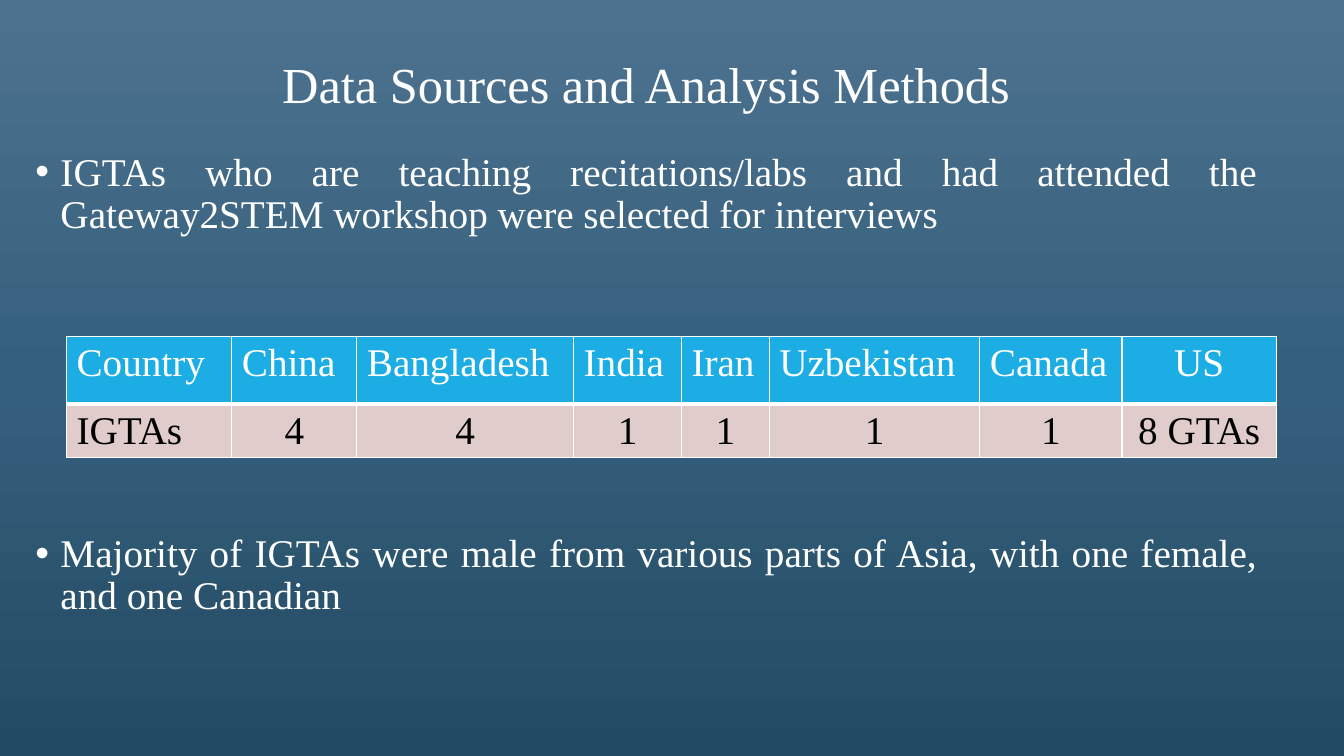
"""Build the slide on data sources and analysis methods."""
from copy import deepcopy

from lxml import etree
from pptx import Presentation
from pptx.dml.color import RGBColor
from pptx.enum import text
from pptx.oxml import ns
from pptx.util import Inches, Pt

WHITE = RGBColor(0xFF, 0xFF, 0xFF)
BLACK = RGBColor(0, 0, 0)
BLUE = RGBColor(0x1C, 0xAD, 0xE4)
PINK = RGBColor(0xE0, 0xCC, 0xCA)
SKY = [RGBColor(0x4D, 0x72, 0x8F), RGBColor(0x35, 0x60, 0x7D), RGBColor(0x23, 0x4A, 0x63)]
ALIGN = text.PP_ALIGN


def style(para, size, color, align):
    para.font.name = "Times New Roman"
    para.font.size = Pt(size)
    para.font.color.rgb = color
    para.alignment = align


def paint(parent, color):
    fill = etree.SubElement(parent, ns.qn("a:solidFill"))
    etree.SubElement(fill, ns.qn("a:srgbClr"), val=str(color))


deck = Presentation()
deck.slide_width, deck.slide_height = Inches(13.33), Inches(7.5)
slide = deck.slides.add_slide(deck.slide_layouts[1])

back = slide.background.fill
back.gradient()
back.gradient_angle = 270
stops = slide.element.find(".//" + ns.qn("a:gsLst"))
stops.insert(1, deepcopy(stops[0]))
for stop, color, place in zip(back.gradient_stops, SKY, (0, 0.5, 1)):
    stop.color.rgb = color
    stop.position = place

title, body = slide.placeholders
boxes = [(title, 0.66, 0.14, 11.5, 1.45), (body, 0.25, 1.46, 12.32, 5.9)]
for box, left, top, width, height in boxes:
    box.left, box.top = Inches(left), Inches(top)
    box.width, box.height = Inches(width), Inches(height)
    box.text_frame.auto_size = text.MSO_AUTO_SIZE.NONE

title.text_frame.text = "Data Sources and Analysis Methods"
title.text_frame.vertical_anchor = text.MSO_ANCHOR.MIDDLE
head = title.text_frame.paragraphs[0]
style(head, 36, WHITE, ALIGN.CENTER)
head.line_spacing = 0.9

body.text_frame.text = (
    "IGTAs who are teaching recitations/labs and had attended the "
    "Gateway2STEM workshop were selected for interviews\n"
    "Majority of IGTAs were male from various parts of Asia, with one female, "
    "and one Canadian"
)
for para, gap in zip(body.text_frame.paragraphs, (0, 212)):
    style(para, 28, WHITE, ALIGN.JUSTIFY)
    para.line_spacing = 0.9
    para.space_before = Pt(gap)
    props = para.font.fill._xPr.getparent()
    props.set("marL", str(Inches(0.25)))
    props.set("indent", str(Inches(-0.25)))
    tint = etree.Element(ns.qn("a:buClr"))
    etree.SubElement(tint, ns.qn("a:srgbClr"), val=str(WHITE))
    mark = etree.Element(ns.qn("a:buChar"), char="•")
    for item in (tint, mark):
        props.find(ns.qn("a:defRPr")).addprevious(item)

rows = [
    ["Country", "China", "Bangladesh", "India", "Iran", "Uzbekistan", "Canada", "US"],
    ["IGTAs", "4", "4", "1", "1", "1", "1", "8 GTAs"],
]
widths = [1.64, 1.24, 2.15, 1.07, 0.87, 2.09, 1.41, 1.53]
heights = [0.67, 0.53]
looks = [(BLUE, WHITE, {"B": 3}), (PINK, BLACK, {"T": 3})]
table = slide.shapes.add_table(
    2, 8, Inches(0.66), Inches(3.34), Inches(sum(widths)), Inches(sum(heights))
).table
for col, width in zip(table.columns, widths):
    col.width = Inches(width)
for r, (names, (fill, ink, thick)) in enumerate(zip(rows, looks)):
    table.rows[r].height = Inches(heights[r])
    for c, name in enumerate(names):
        cell = table.cell(r, c)
        cell.text = name
        mid = name == "US" or (r == 1 and c > 0)
        style(cell.text_frame.paragraphs[0], 28, ink, ALIGN.CENTER if mid else ALIGN.LEFT)
        edges = cell._tc.get_or_add_tcPr()
        for side in "LRTB":
            line = etree.SubElement(edges, ns.qn("a:ln" + side), w=str(Pt(thick.get(side, 1))))
            paint(line, WHITE)
        cell.fill.solid()
        cell.fill.fore_color.rgb = fill

deck.save("out.pptx")
